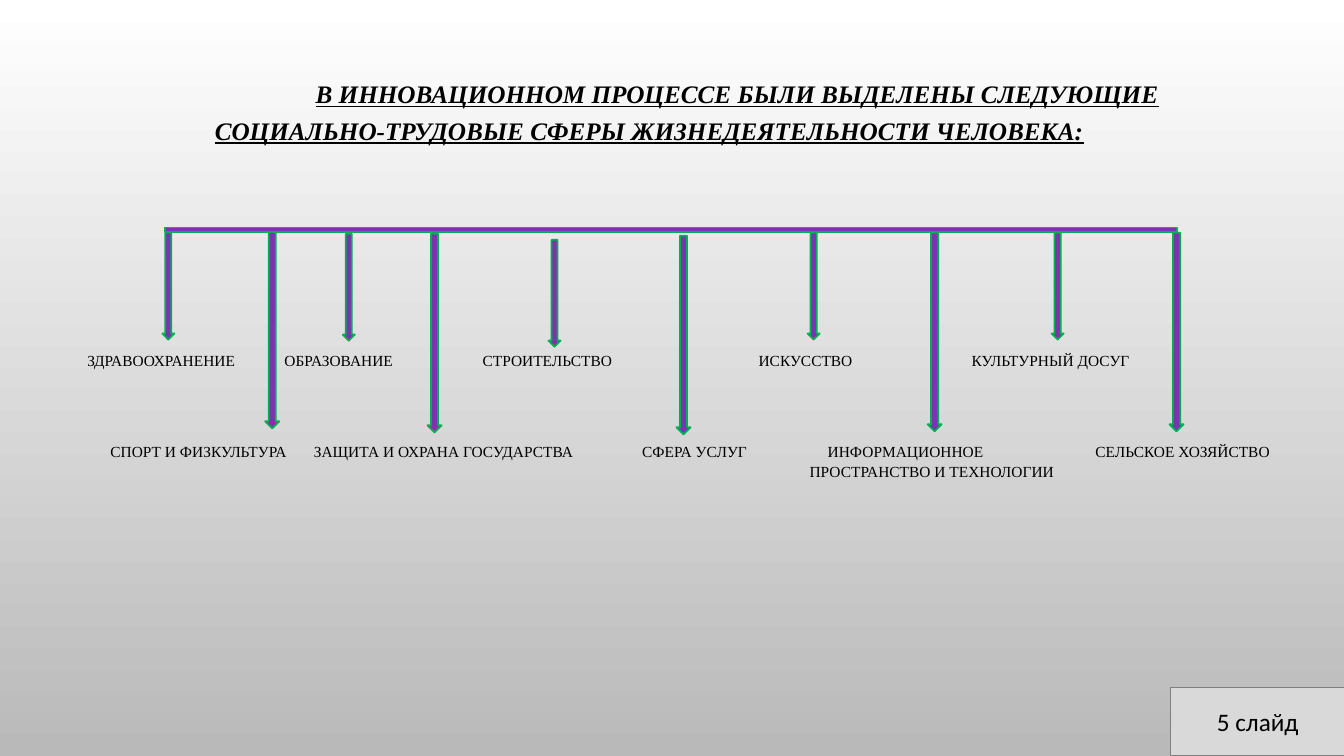
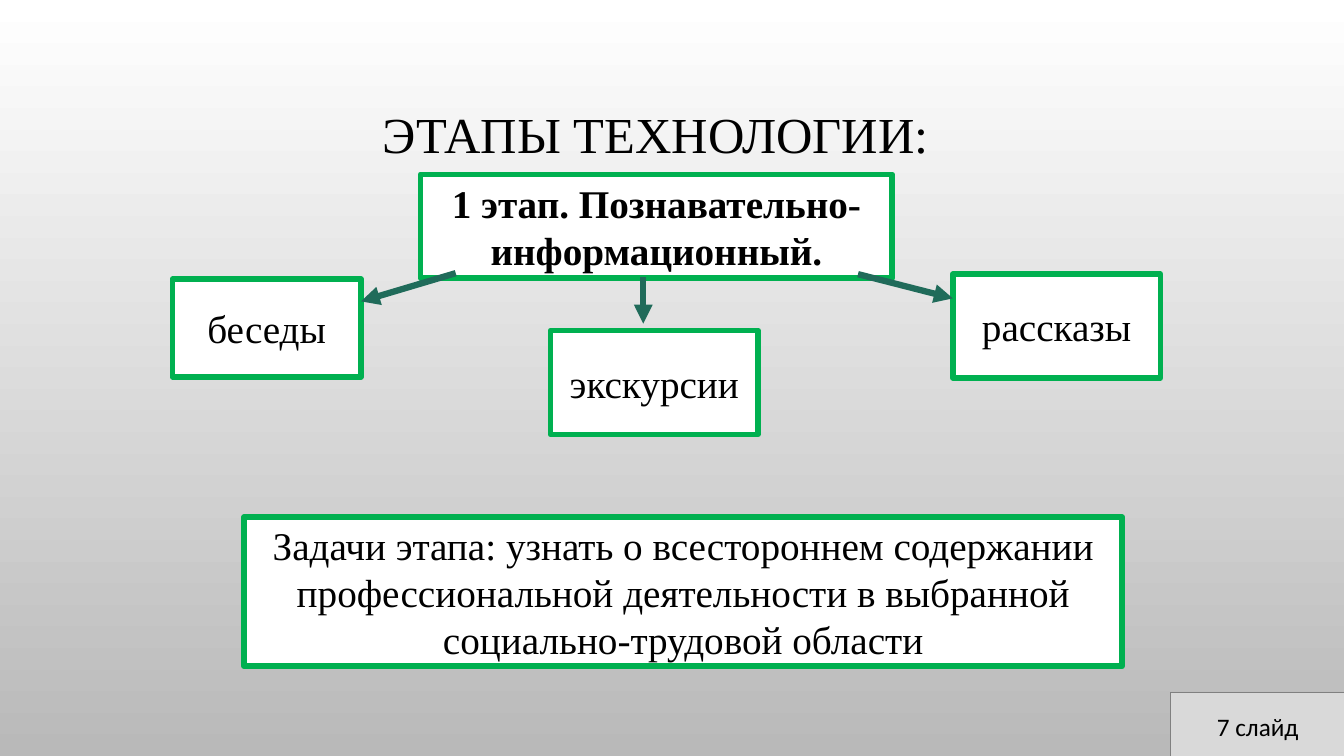
"""Builds two slides on the spheres and stages of a career guidance technology."""
import dataclasses

import lxml.etree
import pptx
import pptx.dml.color
import pptx.enum.dml
import pptx.enum.shapes
import pptx.enum.text
import pptx.oxml.ns
import pptx.util

Inches = pptx.util.Inches
Pt = pptx.util.Pt
Preset = pptx.enum.shapes.MSO_SHAPE
Align = pptx.enum.text.PP_ALIGN
Anchor = pptx.enum.text.MSO_ANCHOR


@dataclasses.dataclass(frozen=True)
class Theme:
    serif: str = "Times New Roman"
    sans: str = "Calibri"
    text: str = "000000"
    box: str = "FFFFFF"
    frame: str = "00B050"
    branch: str = "7E32B0"
    link: str = "206B5A"
    badge: str = "D9D9D9"
    badge_edge: str = "808080"
    backdrop: tuple = ("FFFFFF", "B9B9B9")
    label_size: int = 11
    small_size: int = 18
    box_size: int = 28
    title_size: int = 36
    thin: float = 1.25
    thick: float = 4
    link_width: float = 4.5


def rgb(value):
    return pptx.dml.color.RGBColor.from_string(value)


class Deck:
    def __init__(self, theme):
        self.theme = theme
        self.show = pptx.Presentation()
        self.show.slide_width = Inches(13.33)
        self.show.slide_height = Inches(7.5)
        self.slide = None
        backdrop = self.show.slide_master.background.fill
        backdrop.gradient()
        backdrop.gradient_angle = 270
        for stop, color in zip(backdrop.gradient_stops, theme.backdrop):
            stop.color.rgb = rgb(color)

    def start(self, badge_text, badge_top):
        self.slide = self.show.slides.add_slide(self.show.slide_layouts[5])
        badge = self.shape(Preset.RECTANGLE, (11.61, badge_top, 1.73, 0.68),
                           self.theme.badge, self.theme.badge_edge, self.theme.thin)
        self.set_text(badge, badge_text, self.theme.small_size, font=self.theme.sans)

    def set_text(self, holder, text, size, font=None, align=Align.CENTER,
                 anchor=Anchor.MIDDLE, spacing=1.0, indent=0, **emphasis):
        frame = holder.text_frame
        frame.text = text
        frame.word_wrap = True
        frame.auto_size = pptx.enum.text.MSO_AUTO_SIZE.NONE
        frame.vertical_anchor = anchor
        paragraph = frame.paragraphs[0]
        paragraph.alignment = align
        paragraph.line_spacing = spacing
        if indent:
            paragraph._p.get_or_add_pPr().set("indent", str(Inches(indent)))
        for run in paragraph.runs:
            run.font.name = font or self.theme.serif
            run.font.size = Pt(size)
            run.font.color.rgb = rgb(self.theme.text)
            run.font.bold = emphasis.get("bold")
            run.font.italic = emphasis.get("italic")
            run.font.underline = emphasis.get("underline")

    def title(self, text, place, size, **style):
        heading = self.slide.shapes.title
        heading.left, heading.top, heading.width, heading.height = map(Inches, place)
        self.set_text(heading, text, size, anchor=Anchor.TOP, spacing=1.2, **style)

    def shape(self, preset, place, fill, edge, edge_width):
        shape = self.slide.shapes.add_shape(preset, *map(Inches, place))
        shape.shadow.inherit = False
        shape.fill.solid()
        shape.fill.fore_color.rgb = rgb(fill)
        shape.line.color.rgb = rgb(edge)
        shape.line.width = Pt(edge_width)
        return shape

    def branch(self, preset, place):
        self.shape(preset, place, self.theme.branch, self.theme.frame, self.theme.thin)

    def box(self, text, place, **emphasis):
        box = self.shape(Preset.RECTANGLE, place, self.theme.box,
                         self.theme.frame, self.theme.thick)
        self.set_text(box, text, self.theme.box_size, **emphasis)

    def label(self, text, center, top, width, **style):
        place = (center - width / 2, top, width, 0.4)
        label = self.slide.shapes.add_textbox(*map(Inches, place))
        frame = label.text_frame
        frame.margin_left = frame.margin_right = 0
        frame.margin_top = frame.margin_bottom = 0
        self.set_text(label, text, self.theme.label_size, anchor=Anchor.TOP,
                      spacing=1.08, **style)

    def arrow(self, start, end):
        arrow = self.slide.shapes.add_connector(
            pptx.enum.shapes.MSO_CONNECTOR.STRAIGHT, *map(Inches, start + end))
        arrow.line.color.rgb = rgb(self.theme.link)
        arrow.line.width = Pt(self.theme.link_width)
        qn = pptx.oxml.ns.qn
        lxml.etree.SubElement(arrow.line._get_or_add_ln(), qn("a:tailEnd"),
                              type="triangle")
        lxml.etree.SubElement(arrow._element.spPr, qn("a:effectLst"))


def spheres_slide(deck):
    deck.start("5 слайд", 6.82)
    deck.title("В ИННОВАЦИОННОМ ПРОЦЕССЕ БЫЛИ ВЫДЕЛЕНЫ СЛЕДУЮЩИЕ "
               "СОЦИАЛЬНО-ТРУДОВЫЕ СФЕРЫ ЖИЗНЕДЕЯТЕЛЬНОСТИ ЧЕЛОВЕКА:",
               (2.03, 0.67, 9.6, 1.1), deck.theme.small_size, align=Align.LEFT,
               indent=1, bold=True, italic=True, underline=True)
    upper = [
        ("ЗДРАВООХРАНЕНИЕ", 1.67, 2.31, 1.6, 1.6, {}),
        ("ОБРАЗОВАНИЕ", 3.46, 2.32, 3.36, 1.2, {}),
        ("СТРОИТЕЛЬСТВО", 5.5, 2.38, 5.43, 1.4, {}),
        ("ИСКУССТВО", 8.07, 2.31, 7.99, 1.1, {}),
        ("КУЛЬТУРНЫЙ ДОСУГ", 10.49, 2.31, 10.42, 1.7, {}),
    ]
    lower = [
        ("СПОРТ И ФИЗКУЛЬТУРА", 2.7, 2.28, 1.97, 1.9, {}),
        ("ЗАЩИТА И ОХРАНА ГОСУДАРСТВА", 4.31, 2.32, 4.4, 2.7, {}),
        ("СФЕРА УСЛУГ", 6.78, 2.34, 6.89, 1.2, {}),
        ("ИНФОРМАЦИОННОЕ ПРОСТРАНСТВО И ТЕХНОЛОГИИ", 9.27, 2.31, 9.28, 2.5,
         {"align": Align.LEFT, "indent": 0.18}),
        ("СЕЛЬСКОЕ ХОЗЯЙСТВО", 11.67, 2.31, 11.73, 1.9, {}),
    ]
    for spheres, thickness, length, label_top in ((upper, 0.12, 1.06, 3.47),
                                                  (lower, 0.14, 1.97, 4.37)):
        for name, axis, top, center, width, style in spheres:
            deck.branch(Preset.DOWN_ARROW,
                        (axis - thickness / 2, top, thickness, length))
            deck.label(name, center, label_top, width, **style)
    deck.branch(Preset.MATH_MINUS, (-0.17, 2.18, 13.65, 0.2))


def stages_slide(deck):
    deck.start("7 слайд", 6.87)
    deck.title("ЭТАПЫ ТЕХНОЛОГИИ:", (1.89, 0.85, 9.23, 0.9), deck.theme.title_size)
    deck.box("рассказы", (9.45, 2.72, 2.06, 1.03))
    deck.box("экскурсии", (5.46, 3.28, 2.06, 1.03))
    deck.box("беседы", (1.71, 2.77, 1.87, 0.97))
    deck.box("1 этап. Познавательно-информационный.", (4.17, 1.73, 4.68, 1.03),
             bold=True)
    for start, end in (((8.51, 2.72), (9.45, 2.96)),
                       ((6.38, 2.75), (6.38, 3.21)),
                       ((4.52, 2.71), (3.58, 2.99))):
        deck.arrow(start, end)
    deck.box("Задачи этапа: узнать о всестороннем содержании профессиональной "
             "деятельности в выбранной социально-трудовой области",
             (2.42, 5.13, 8.71, 1.48))


def main():
    deck = Deck(Theme())
    spheres_slide(deck)
    stages_slide(deck)
    deck.show.save("out.pptx")


if __name__ == "__main__":
    main()
